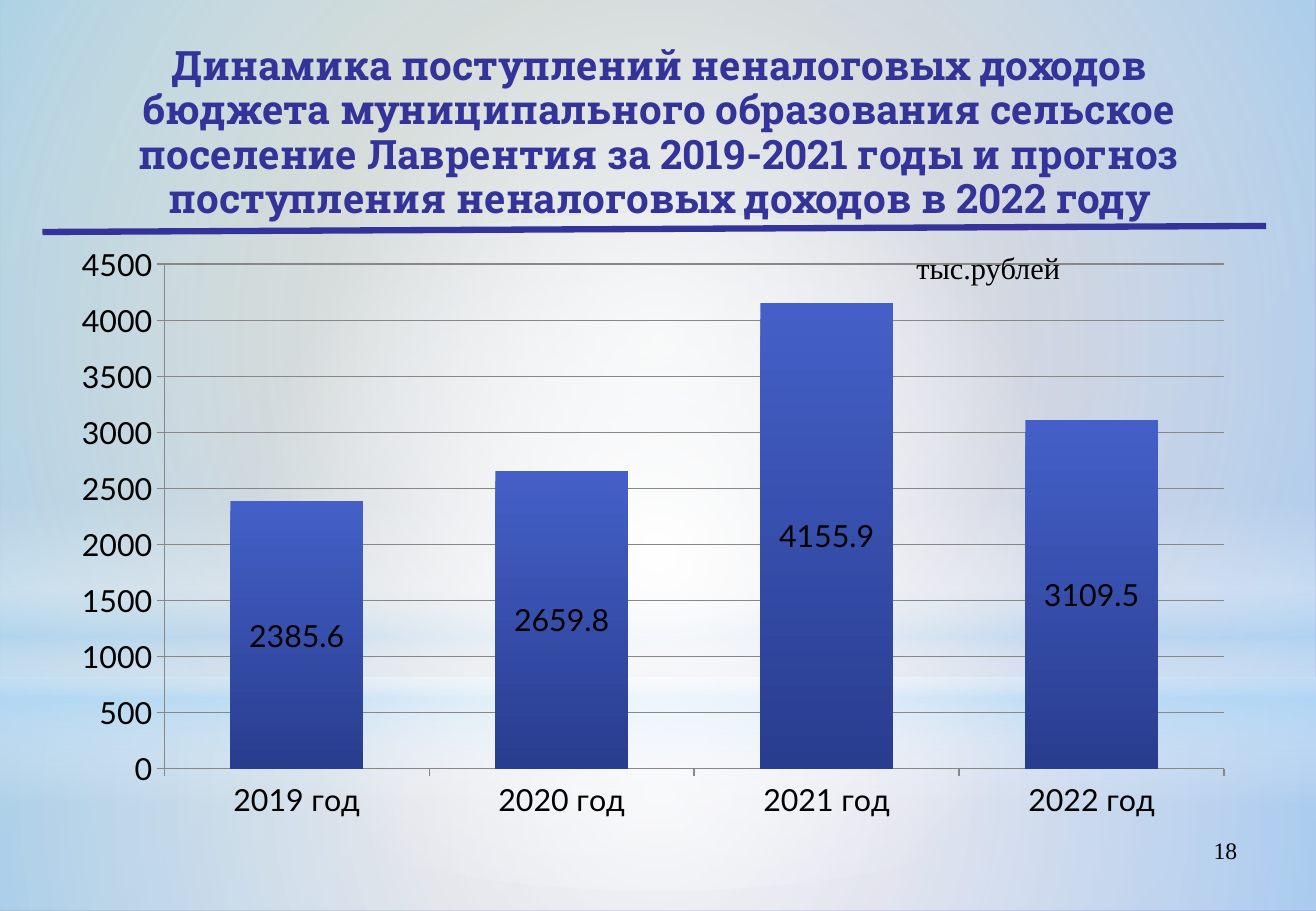
import pptx
import pptx.chart.data
import pptx.dml.color
import pptx.enum.chart
import pptx.enum.shapes
import pptx.enum.text
import pptx.oxml
import pptx.oxml.ns
import pptx.util

Inches = pptx.util.Inches
Points = pptx.util.Pt
Shapes = pptx.enum.shapes.MSO_SHAPE
Align = pptx.enum.text.PP_ALIGN

COLORS = {
    "title": "333399", "text": "000000", "grid": "878787",
    "bar_top": "4460C8", "bar_bottom": "293D8F",
    "green": "96AB94", "violet": "8488C4", "white": "FFFFFF", "sky": "B4DCFA",
}
SERIF = "Times New Roman"
CENTRE_PATH = ('<a:path path="circle"><a:fillToRect l="50000" t="50000" '
               'r="50000" b="50000"/></a:path>')
DOWNWARD = '<a:lin ang="5400000" scaled="0"/>'

# Each glow: shape, box, direction, stops of (position, colour, opacity)
GLOWS = [
    (Shapes.RECTANGLE, (0, 5.58, 10.84, 1.92), CENTRE_PATH,
     [(0, "white", 91), (37, "white", 76), (100, "sky", 79)]),
    (Shapes.RECTANGLE, (0, 0, 10.84, 5.58), CENTRE_PATH,
     [(0, "white", 89), (48, "white", 62), (100, "sky", 79)]),
    (Shapes.RECTANGLE, (0, 4.12, 10.84, 2.5), DOWNWARD,
     [(0, "white", 0), (29, "white", 30), (45, "sky", 40),
      (55, "white", 26), (65, "sky", 60), (100, "white", 0)]),
    (Shapes.OVAL, (0, 1.75, 10.84, 5.58), CENTRE_PATH,
     [(0, "white", 100), (56, "white", 0)]),
]


def rgb(name):
    return pptx.dml.color.RGBColor.from_string(COLORS[name])


def style_font(font, name, size, color, bold=False):
    font.name, font.size, font.bold = name, Points(size), bold
    font.color.rgb = rgb(color)


def two_color_fill(fill, first, last, angle):
    fill.gradient()
    fill.gradient_angle = angle
    for stop, name in zip(fill.gradient_stops, (first, last)):
        stop.color.rgb = rgb(name)


def add_glow(page, kind, box, direction, stops):
    glow = page.shapes.add_shape(kind, *map(Inches, box))
    glow.shadow.inherit = False
    glow.line.fill.background()
    glow.fill.solid()
    stop_xml = "".join(
        f'<a:gs pos="{position * 1000}"><a:srgbClr val="{COLORS[name]}">'
        f'<a:alpha val="{opacity * 1000}"/></a:srgbClr></a:gs>'
        for position, name, opacity in stops)
    gradient = pptx.oxml.parse_xml(
        f'<a:gradFill {pptx.oxml.ns.nsdecls("a")} rotWithShape="1">'
        f'<a:gsLst>{stop_xml}</a:gsLst>{direction}</a:gradFill>')
    properties = glow._element.spPr
    properties.replace(properties.find(pptx.oxml.ns.qn("a:solidFill")), gradient)


def add_background(page):
    two_color_fill(page.background.fill, "green", "violet", 315)
    for glow in GLOWS:
        add_glow(page, *glow)


def add_title(page, left, top, width, height):
    title = page.shapes.title
    title.left, title.top = Inches(left), Inches(top)
    title.width, title.height = Inches(width), Inches(height)
    frame = title.text_frame
    frame.text = ("Динамика поступлений неналоговых доходов бюджета муниципального "
                  "образования сельское поселение Лаврентия за 2019-2021 годы и прогноз "
                  "поступления неналоговых доходов в 2022 году")
    frame.word_wrap = True
    frame.auto_size = pptx.enum.text.MSO_AUTO_SIZE.NONE
    frame.vertical_anchor = pptx.enum.text.MSO_ANCHOR.MIDDLE
    para = frame.paragraphs[0]
    para.alignment, para.line_spacing = Align.CENTER, 0.91
    style_font(para.runs[0].font, "Roboto Slab", 24, "title", bold=True)


def add_rule(page, start, end):
    rule = page.shapes.add_connector(
        pptx.enum.shapes.MSO_CONNECTOR.STRAIGHT, *map(Inches, start + end))
    rule.line.color.rgb = rgb("title")
    rule.line.width = Points(3.75)
    rule._element.spPr.append(
        pptx.oxml.parse_xml(f'<a:effectLst {pptx.oxml.ns.nsdecls("a")}/>'))


def add_income_chart(page, left, top, width, height):
    data = pptx.chart.data.CategoryChartData()
    data.categories = [f"{year} год" for year in range(2019, 2023)]
    data.add_series("Series 1", [2385.6, 2659.8, 4155.9, 3109.5])
    chart = page.shapes.add_chart(
        pptx.enum.chart.XL_CHART_TYPE.COLUMN_STACKED,
        *map(Inches, (left, top, width, height)), data).chart
    chart.has_legend = chart.has_title = False
    style_font(chart.font, "Lato", 18, "text")

    # Axes and grid
    scale = chart.value_axis
    scale.minimum_scale, scale.maximum_scale, scale.major_unit = 0, 4500, 500
    scale.has_major_gridlines = True
    scale.tick_labels.number_format = "0"
    scale.tick_labels.number_format_is_linked = False
    for axis in (scale, chart.category_axis):
        axis.major_tick_mark = pptx.enum.chart.XL_TICK_MARK.OUTSIDE
        axis.minor_tick_mark = pptx.enum.chart.XL_TICK_MARK.NONE
    for line in (scale.format.line, chart.category_axis.format.line,
                 scale.major_gridlines.format.line):
        line.color.rgb = rgb("grid")
        line.width = Points(0.75)

    # Bars and their values
    plot = chart.plots[0]
    plot.gap_width, plot.overlap, plot.vary_by_categories = 100, 100, False
    two_color_fill(plot.series[0].format.fill, "bar_top", "bar_bottom", 270)
    labels = plot.series[0].data_labels
    labels.show_value = True
    labels.number_format, labels.number_format_is_linked = "0.0", False
    labels.position = pptx.enum.chart.XL_LABEL_POSITION.CENTER
    style_font(labels.font, "Lato", 18, "text")

    # Fixed plot area
    area = chart._chartSpace.chart.plotArea
    for old in area.findall(pptx.oxml.ns.qn("c:layout")):
        area.remove(old)
    sizes = "".join(f'<c:{key} val="{value}"/>' for key, value in
                    (("x", 0.09), ("y", 0.05), ("w", 0.89), ("h", 0.85)))
    area.insert(0, pptx.oxml.parse_xml(
        f'<c:layout {pptx.oxml.ns.nsdecls("c")}><c:manualLayout>'
        '<c:layoutTarget val="inner"/><c:xMode val="edge"/><c:yMode val="edge"/>'
        f'{sizes}</c:manualLayout></c:layout>'))


def add_label(page, text, box, size, alignment, wrap):
    frame = page.shapes.add_textbox(*map(Inches, box)).text_frame
    frame.text = text
    frame.word_wrap = wrap
    para = frame.paragraphs[0]
    para.alignment = alignment
    style_font(para.runs[0].font, SERIF, size, "text")


def main():
    deck = pptx.Presentation()
    deck.slide_width, deck.slide_height = Inches(10.84), Inches(7.5)
    page = deck.slides.add_slide(deck.slide_layouts[5])
    add_background(page)
    # Bring the title in front of the background glows
    page.shapes._spTree.append(page.shapes.title._element)
    add_label(page, "18", (7.76, 6.83, 2.53, 0.52), 14, Align.RIGHT, True)
    add_title(page, 0.83, 0.25, 9.2, 1.7)
    add_rule(page, (0.35, 1.91), (10.43, 1.86))
    add_income_chart(page, 0.47, 1.93, 9.81, 4.89)
    add_label(page, "тыс.рублей", (7.45, 2, 1.4, 0.4), 18, Align.LEFT, False)
    deck.save("out.pptx")


if __name__ == "__main__":
    main()
